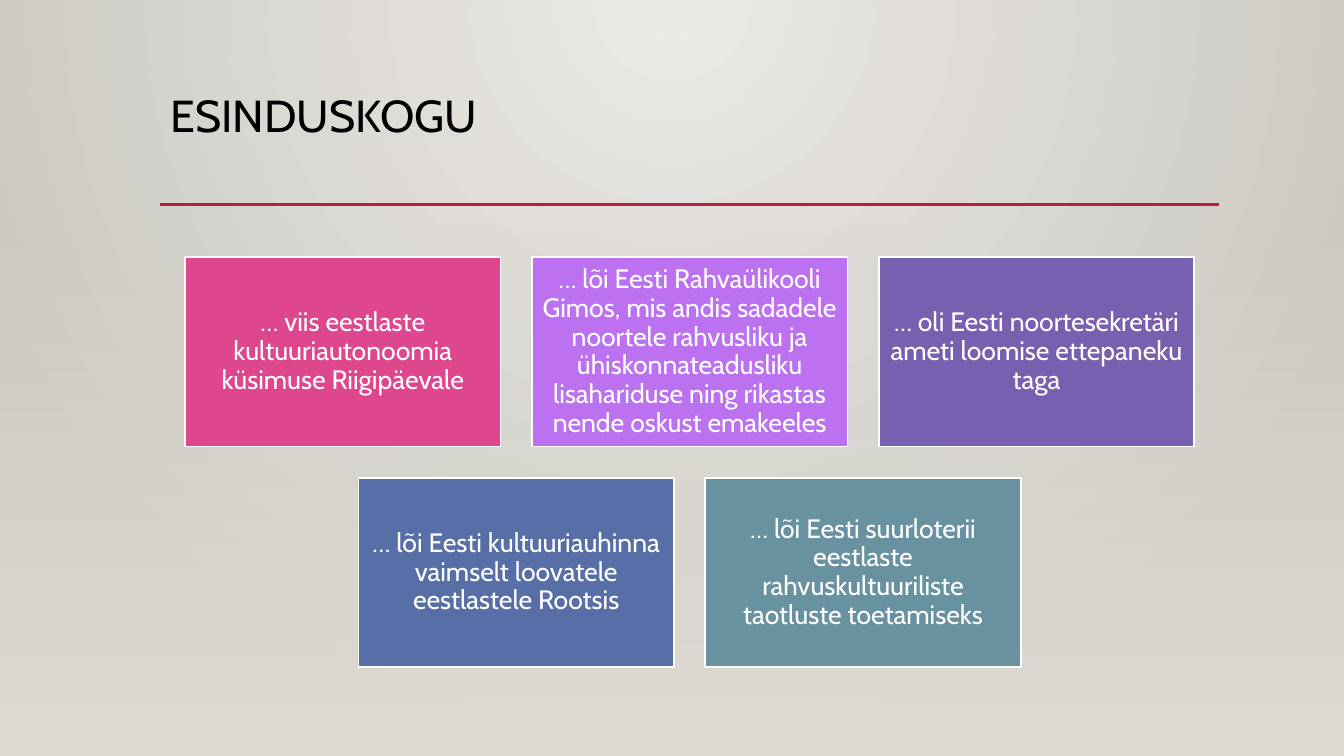
from lxml import etree
from pptx import Presentation
from pptx.dml.color import RGBColor
from pptx.enum.shapes import MSO_CONNECTOR, MSO_SHAPE
from pptx.enum.text import MSO_ANCHOR, PP_ALIGN
from pptx.oxml import parse_xml
from pptx.oxml.ns import nsdecls, qn
from pptx.util import Inches, Pt

LEFT, CENTER = PP_ALIGN.LEFT, PP_ALIGN.CENTER
TOP, MIDDLE = MSO_ANCHOR.TOP, MSO_ANCHOR.MIDDLE
RECTANGLE, STRAIGHT = MSO_SHAPE.RECTANGLE, MSO_CONNECTOR.STRAIGHT

TITLE = "ESINDUSKOGU"
CARD_ROWS = [
    [
        ("… viis eestlaste kultuuriautonoomia küsimuse Riigipäevale", "DE478E"),
        ("… lõi Eesti Rahvaülikooli Gimos, mis andis sadadele noortele rahvusliku ja "
         "ühiskonnateadusliku lisahariduse ning rikastas nende oskust emakeeles", "BC72F0"),
        ("… oli Eesti noortesekretäri ameti loomise ettepaneku taga", "795FAF"),
    ],
    [
        ("… lõi Eesti kultuuriauhinna vaimselt loovatele eestlastele Rootsis", "586EA6"),
        ("… lõi Eesti suurloterii eestlaste rahvuskultuuriliste taotluste toetamiseks", "6892A0"),
    ],
]

WIDTH, HEIGHT = 13.33, 7.5
CONTENT_LEFT, CONTENT_WIDTH = 1.59, 10.5
TITLE_TOP, TITLE_HEIGHT = 0.88, 1.15
FADE_TOP = 2.21
CARD_WIDTH, CARD_HEIGHT, GAP, CARDS_TOP = 3.13, 1.88, 0.31, 2.55

BACKGROUND_STOPS = [(0, "ECEAE7", 100), (100, "CAC7C1", 100)]
FADE_STOPS = [(0, "DFDBD5", 0), (100, "DFDBD5", 100)]
RADIAL = ('<a:path path="circle"><a:fillToRect l="43000" t="0" r="43000" b="100000"/></a:path>')
DOWNWARD = '<a:lin ang="5400000" scaled="0"/>'


def color(value):
    return RGBColor.from_string(value)


def set_gradient(fill, owner, stops, direction):
    fill.gradient()
    stop_xml = "".join(
        f'<a:gs pos="{position * 1000}"><a:srgbClr val="{value}">'
        f'<a:alpha val="{opacity * 1000}"/></a:srgbClr></a:gs>'
        for position, value, opacity in stops
    )
    old = owner.xpath(".//a:gradFill")[0]
    old.getparent().replace(old, parse_xml(
        f'<a:gradFill {nsdecls("a")} rotWithShape="1"><a:gsLst>{stop_xml}</a:gsLst>'
        f'{direction}</a:gradFill>'))


def write_text(shape, text, size, value, alignment, anchor, inset_x, inset_y):
    frame = shape.text_frame
    frame_format = {
        "word_wrap": True, "vertical_anchor": anchor,
        "margin_left": Inches(inset_x), "margin_right": Inches(inset_x),
        "margin_top": Inches(inset_y), "margin_bottom": Inches(inset_y),
    }
    for name, setting in frame_format.items():
        setattr(frame, name, setting)
    paragraph = frame.paragraphs[0]
    paragraph.alignment = alignment
    paragraph.line_spacing = 0.9
    run = paragraph.add_run()
    run.text = text
    for name, setting in {"name": "Cabin", "size": Pt(size)}.items():
        setattr(run.font, name, setting)
    run.font.color.rgb = color(value)


def add_rectangle(slide, left, top, width, height):
    shape = slide.shapes.add_shape(
        RECTANGLE, Inches(left), Inches(top), Inches(width), Inches(height))
    shape.shadow.inherit = False
    return shape


def add_backdrop(slide):
    set_gradient(slide.background.fill, slide.element, BACKGROUND_STOPS, RADIAL)
    fade = add_rectangle(slide, 0, FADE_TOP, WIDTH, HEIGHT - FADE_TOP)
    fade.line.fill.background()
    set_gradient(fade.fill, fade.element, FADE_STOPS, DOWNWARD)


def add_title(slide):
    title = slide.shapes.title
    box = {"left": CONTENT_LEFT, "top": TITLE_TOP,
           "width": CONTENT_WIDTH, "height": TITLE_HEIGHT}
    for name, length in box.items():
        setattr(title, name, Inches(length))
    write_text(title, TITLE, 32, "000000", LEFT, TOP, 0.1, 0.05)
    rule_y = Inches(TITLE_TOP + TITLE_HEIGHT)
    rule = slide.shapes.add_connector(
        STRAIGHT, Inches(CONTENT_LEFT), rule_y, Inches(CONTENT_LEFT + CONTENT_WIDTH), rule_y)
    rule.line.color.rgb = color("B71E42")
    rule.line.width = Pt(2.5)
    etree.SubElement(rule.element.spPr, qn("a:effectLst"))


def add_cards(slide):
    center = CONTENT_LEFT + CONTENT_WIDTH / 2
    for row, cards in enumerate(CARD_ROWS):
        row_width = len(cards) * (CARD_WIDTH + GAP) - GAP
        top = CARDS_TOP + row * (CARD_HEIGHT + GAP)
        for column, (text, fill) in enumerate(cards):
            left = center - row_width / 2 + column * (CARD_WIDTH + GAP)
            card = add_rectangle(slide, left, top, CARD_WIDTH, CARD_HEIGHT)
            card.fill.solid()
            card.fill.fore_color.rgb = color(fill)
            card.line.color.rgb = color("FFFFFF")
            card.line.width = Pt(1.25)
            write_text(card, text, 19, "FFFFFF", CENTER, MIDDLE, 0.08, 0.08)


def main():
    presentation = Presentation()
    presentation.slide_width = Inches(WIDTH)
    presentation.slide_height = Inches(HEIGHT)
    slide = presentation.slides.add_slide(presentation.slide_layouts.get_by_name("Title Only"))
    add_backdrop(slide)
    add_title(slide)
    add_cards(slide)
    presentation.save("out.pptx")


if __name__ == "__main__":
    main()
